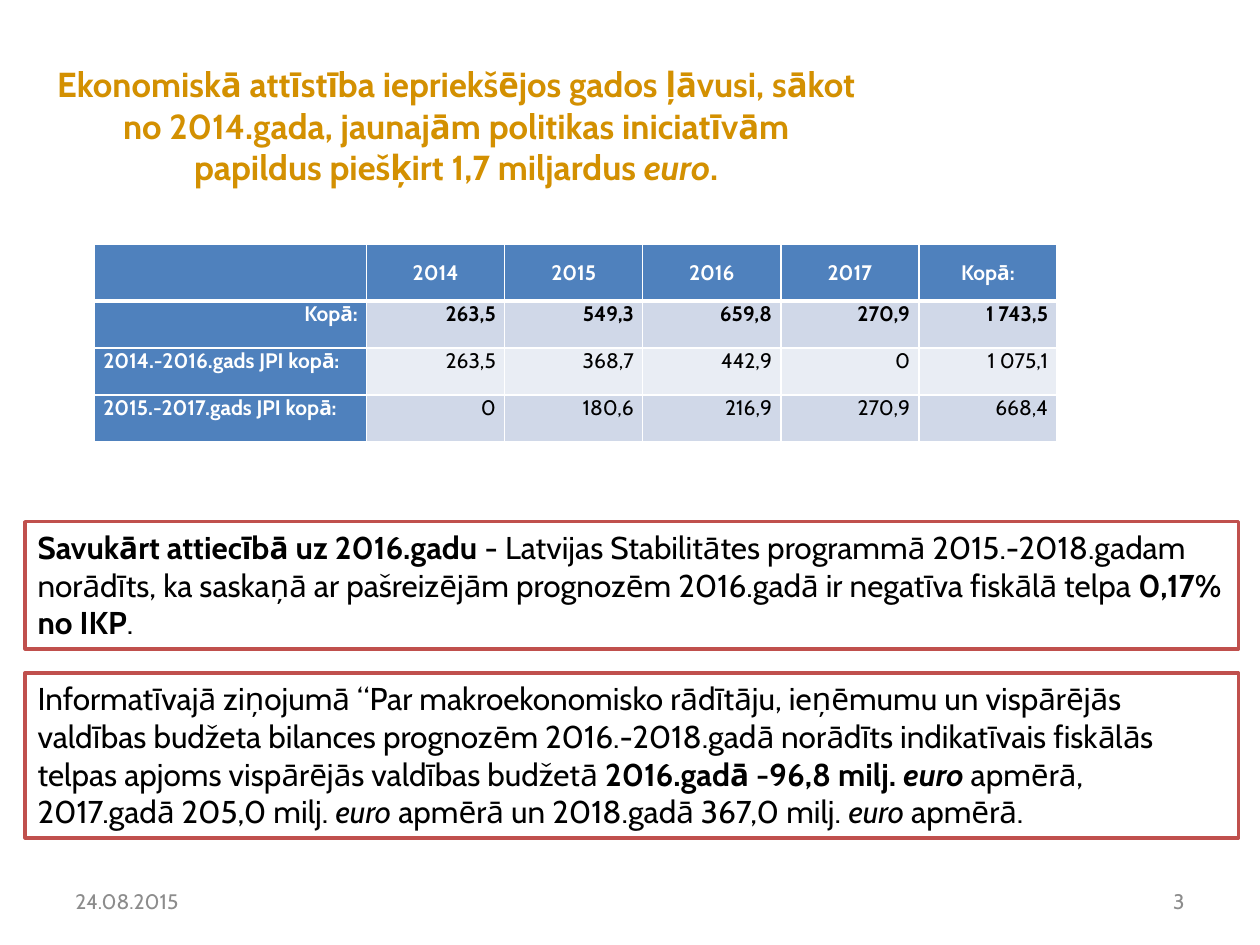
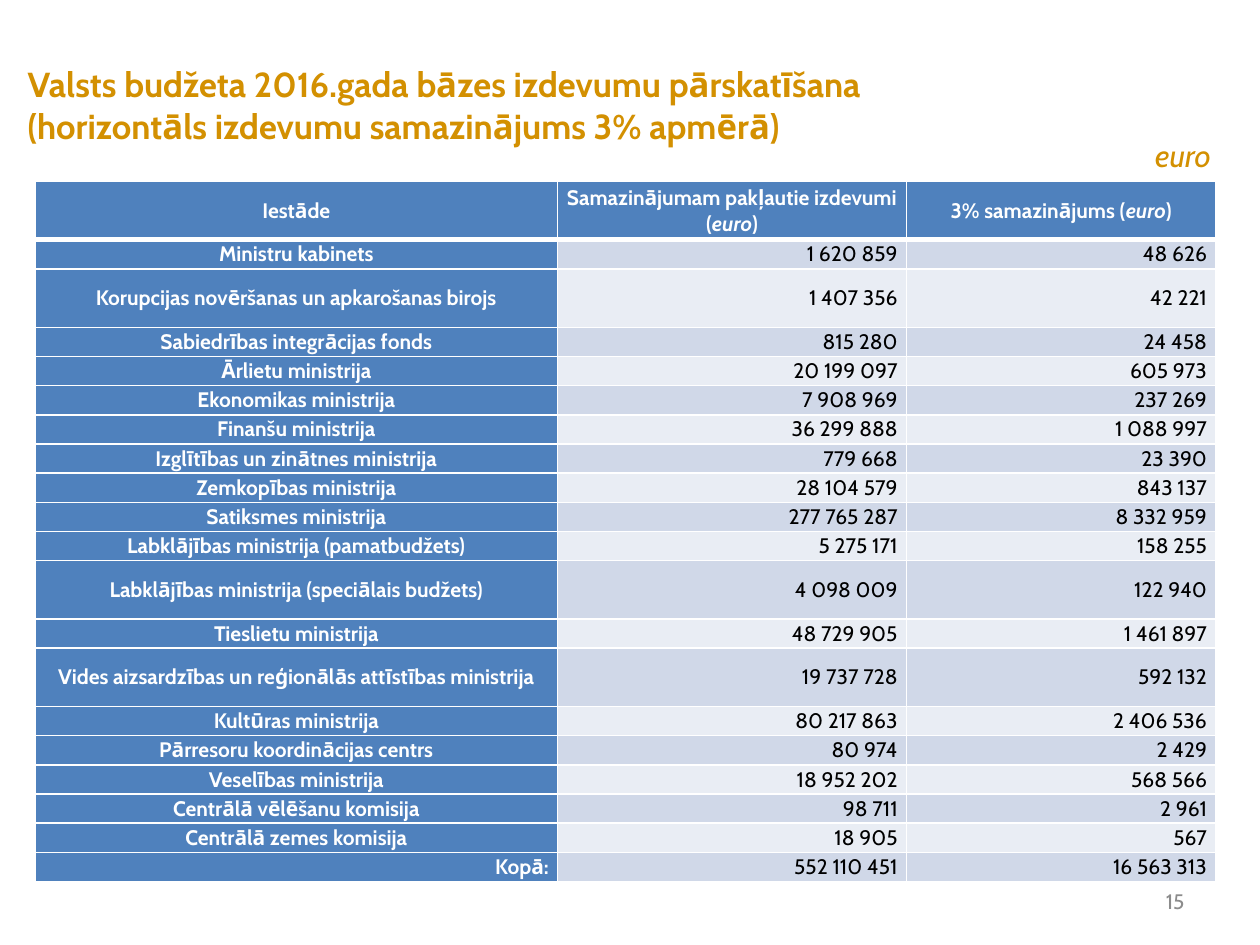
from lxml.etree import SubElement
from pptx import Presentation
from pptx.dml.color import RGBColor
from pptx.enum.shapes import MSO_SHAPE
from pptx.enum.text import MSO_ANCHOR, MSO_AUTO_SIZE, PP_ALIGN
from pptx.oxml.ns import qn
from pptx.util import Inches, Pt

WHITE = RGBColor(0xFF, 0xFF, 0xFF)
BLACK = RGBColor(0, 0, 0)
GOLD = RGBColor(0xD3, 0x90, 0x01)
GREY = RGBColor(0x8C, 0x8C, 0x8C)
BLUE = RGBColor(0x4F, 0x81, 0xBD)
RED = RGBColor(0xC0, 0x50, 0x4D)
BANDS = (RGBColor(0xE9, 0xED, 0xF4), RGBColor(0xD0, 0xD8, 0xE8))

LEFT, MID, RIGHT, JUST = PP_ALIGN.LEFT, PP_ALIGN.CENTER, PP_ALIGN.RIGHT, PP_ALIGN.JUSTIFY
WIDE, HIGH = Inches(10), Inches(7.5)
COLS, ROWS = 100, 75
FOOT = dict(size=12, color=GREY, anchor=MSO_ANCHOR.MIDDLE)
TITLE = dict(size=19.8, color=GOLD, bold=True, anchor=MSO_ANCHOR.MIDDLE)


def put(item, **form):
    for name, value in form.items():
        setattr(item, name, value)


def across(n):
    return round(WIDE * n / COLS)


def down(n):
    return round(HIGH * n / ROWS)


class Deck:
    font = "Cabin"

    def __init__(self):
        self.show = Presentation()
        put(self.show, slide_width=WIDE, slide_height=HIGH)

    def page(self, number):
        self.slide = self.show.slides.add_slide(self.show.slide_layouts[6])
        self.text((71.7, 69.5, 23.3, 4), number, align=RIGHT, **FOOT)

    def place(self, spot):
        x, y, w, h = spot
        return across(x), down(y), across(w), down(h)

    def letter(self, frame, parts, size, color, bold=False, align=LEFT, after=0):
        line = frame.paragraphs[0]
        put(line, alignment=align, space_after=Pt(after))
        for part in [(parts, "")] if isinstance(parts, str) else parts:
            words, style = part
            run = line.add_run()
            run.text = words
            put(run.font, name=self.font, size=Pt(size),
                bold=bold or "b" in style, italic="i" in style)
            run.font.color.rgb = color

    def text(self, spot, parts, anchor=MSO_ANCHOR.TOP, low=0.5, **form):
        box = self.slide.shapes.add_textbox(*self.place(spot))
        put(box.text_frame, word_wrap=True, vertical_anchor=anchor, margin_bottom=down(low))
        self.letter(box.text_frame, parts, **form)

    def panel(self, spot, parts):
        box = self.slide.shapes.add_shape(MSO_SHAPE.RECTANGLE, *self.place(spot))
        box.shadow.inherit = False
        box.fill.solid()
        box.fill.fore_color.rgb = WHITE
        box.line.color.rgb = RED
        box.line.width = Pt(2)
        put(box.text_frame, word_wrap=True, vertical_anchor=MSO_ANCHOR.TOP,
            auto_size=MSO_AUTO_SIZE.SHAPE_TO_FIT_TEXT)
        self.letter(box.text_frame, parts, size=18, color=BLACK)

    def edge(self, cell, row):
        props = cell._tc.get_or_add_tcPr()
        thick = {"lnL": 1, "lnR": 1, "lnT": 3 if row == 1 else 1, "lnB": 3 if row == 0 else 1}
        for name, width in thick.items():
            line = SubElement(props, qn(f"a:{name}"), w=str(Pt(width)))
            fill = SubElement(line, qn("a:solidFill"))
            SubElement(fill, qn("a:srgbClr"), val=str(WHITE))

    def table(self, spot, widths, heights, data, sides, strong=(),
              anchor=MSO_ANCHOR.MIDDLE, after=0):
        x, y = spot
        area = self.place((x, y, sum(widths), sum(heights)))
        grid = self.slide.shapes.add_table(len(data), len(widths), *area).table
        put(grid, first_row=False, horz_banding=False)
        for col, width in zip(grid.columns, widths):
            col.width = across(width)
        for row, height in zip(grid.rows, heights):
            row.height = down(height)
        for r, line in enumerate(data):
            for c, parts in enumerate(line):
                cell = grid.cell(r, c)
                head = r == 0 or c == 0
                put(cell, margin_left=across(0.7), margin_right=across(0.7),
                    margin_top=0, margin_bottom=0,
                    vertical_anchor=MSO_ANCHOR.MIDDLE if r == 0 else anchor)
                self.edge(cell, r)
                cell.fill.solid()
                cell.fill.fore_color.rgb = BLUE if head else BANDS[r % 2]
                side = MID if r == 0 else sides[r - 1] if c == 0 else RIGHT
                if parts:
                    self.letter(cell.text_frame, parts, size=12, after=after, align=side,
                                color=WHITE if head else BLACK, bold=head or r in strong)


def growth(deck):
    deck.page("3")
    deck.text((5, 69.5, 23.3, 4), "24.08.2015", **FOOT)
    deck.text((3.5, 7.6, 65.4, 4.7), [
        ("Ekonomiskā attīstība iepriekšējos gados ļāvusi, sākot no 2014.gada, "
         "jaunajām politikas iniciatīvām papildus piešķirt 1,7 miljardus ", ""),
        ("euro", "i"), (".", "")], align=MID, **TITLE)
    data = [
        ("", "2014", "2015", "2016", "2017", "Kopā:"),
        ("Kopā:", "263,5", "549,3", "659,8", "270,9", "1 743,5"),
        ("2014.-2016.gads JPI kopā:", "263,5", "368,7", "442,9", "0", "1 075,1"),
        ("2015.-2017.gads JPI kopā:", "0", "180,6", "216,9", "270,9", "668,4"),
    ]
    deck.table((7.5, 19.4), [21.6] + [10.96] * 5, [4.5] + [3.73] * 3, data,
               sides=(RIGHT, JUST, JUST), strong=(1,), anchor=MSO_ANCHOR.TOP, after=6)
    deck.panel((2, 41.4, 96.3, 10.1), [
        ("Savukārt attiecībā uz 2016.gadu ", "b"),
        ("- Latvijas Stabilitātes programmā 2015.-2018.gadam norādīts, ka saskaņā ar "
         "pašreizējām prognozēm 2016.gadā ir negatīva fiskālā telpa ", ""),
        ("0,17% no IKP", "b"), (".", "")])
    deck.panel((2, 53.4, 96.3, 13.1), [
        ("Informatīvajā ziņojumā “Par makroekonomisko rādītāju, ieņēmumu un vispārējās "
         "valdības budžeta bilances prognozēm 2016.-2018.gadā norādīts indikatīvais "
         "fiskālās telpas apjoms vispārējās valdības budžetā ", ""),
        ("2016.gadā -96,8 milj. ", "b"), ("euro ", "bi"),
        ("apmērā, 2017.gadā 205,0 milj. ", ""), ("euro", "i"),
        (" apmērā un 2018.gadā 367,0 milj. ", ""), ("euro", "i"), (" apmērā.", "")])


def cuts(deck):
    deck.page("15")
    heads = ("Iestāde",
             [("Samazinājumam pakļautie izdevumi (", ""), ("euro", "i"), (")", "")],
             [("3% samazinājums (", ""), ("euro", "i"), (")", "")])
    sums = [
        ("Ministru kabinets", 1620859, 48626),
        ("Korupcijas novēršanas un apkarošanas birojs", 1407356, 42221),
        ("Sabiedrības integrācijas fonds", 815280, 24458),
        ("Ārlietu ministrija", 20199097, 605973),
        ("Ekonomikas ministrija", 7908969, 237269),
        ("Finanšu ministrija", 36299888, 1088997),
        ("Izglītības un zinātnes ministrija", 779668, 23390),
        ("Zemkopības ministrija", 28104579, 843137),
        ("Satiksmes ministrija", 277765287, 8332959),
        ("Labklājības ministrija (pamatbudžets)", 5275171, 158255),
        ("Labklājības ministrija (speciālais budžets)", 4098009, 122940),
        ("Tieslietu ministrija", 48729905, 1461897),
        ("Vides aizsardzības un reģionālās attīstības ministrija", 19737728, 592132),
        ("Kultūras ministrija", 80217863, 2406536),
        ("Pārresoru koordinācijas centrs", 80974, 2429),
        ("Veselības ministrija", 18952202, 568566),
        ("Centrālā vēlēšanu komisija", 98711, 2961),
        ("Centrālā zemes komisija", 18905, 567),
        ("Kopā:", 552110451, 16563313),
    ]
    data = [heads] + [(name, *(f"{n:,}".replace(",", " ") for n in pair))
                      for name, *pair in sums]
    tall = (0, 2, 11, 13)
    unit = 55.6 / (len(data) + len(tall))
    heights = [unit * (2 if r in tall else 1) for r in range(len(data))]
    deck.table((2.8, 14.4), (41.45, 27.7, 24.55), heights, data,
               sides=[MID] * (len(sums) - 1) + [RIGHT])
    deck.text((1.2, 7.6, 70.5, 4.7),
              "Valsts budžeta 2016.gada bāzes izdevumu pārskatīšana "
              "(horizontāls izdevumu samazinājums 3% apmērā)", low=3.8, **TITLE)
    deck.text((90.7, 10.3, 8.7, 4), [("euro", "i")], size=18, color=GOLD)


def main():
    deck = Deck()
    growth(deck)
    cuts(deck)
    deck.show.save("out.pptx")


if __name__ == "__main__":
    main()
